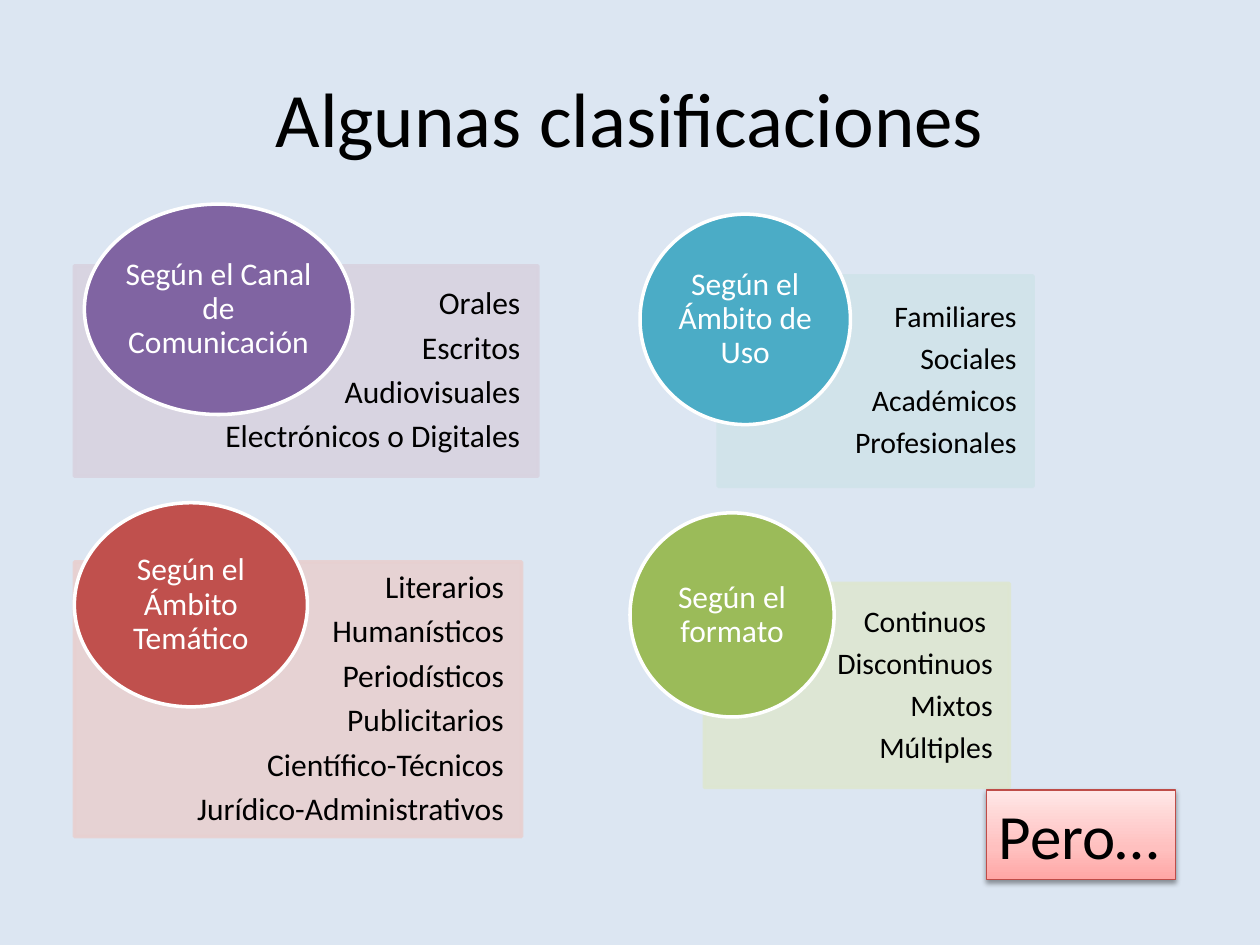
"""Build a slide that groups text types under four criteria."""
from copy import deepcopy
from lxml import etree
from pptx import Presentation
from pptx.dml.color import RGBColor
from pptx.enum import shapes, text
from pptx.oxml import ns
from pptx.util import Inches, Pt

HUES = {
    "back": "DCE6F2", "ink": "000000", "white": "FFFFFF",
    "violet": "8064A2", "lilac": "D8D3E0",
    "teal": "4BACC6", "aqua": "D0E3EA",
    "red": "C0504D", "rose": "E8D0D0",
    "green": "9BBB59", "lime": "DEE7D1",
    "edge": "BF4C48", "deep": "FFA6A5", "mid": "FFC0BF", "pale": "FFE7E7",
}
GROUPS = [
    ("violet", (0.67, 1.62, 2.13, 1.67), "Según el Canal de Comunicación",
     "lilac", (0.59, 2.11, 3.68, 1.67), 18, 0.59, 0.14,
     ["Orales", "Escritos", "Audiovisuales", "Electrónicos o Digitales"]),
    ("teal", (5.08, 1.7, 1.67, 1.67), "Según el Ámbito de Uso",
     "aqua", (5.7, 2.19, 2.5, 1.67), 17, 0.4, 0.13,
     ["Familiares", "Sociales", "Académicos", "Profesionales"]),
    ("red", (0.59, 3.99, 1.85, 1.62), "Según el Ámbito Temático",
     "rose", (0.59, 4.46, 3.55, 2.18), 18, 0.57, 0.14,
     ["Literarios", "Humanísticos", "Periodísticos", "Publicitarios",
      "Científico-Técnicos", "Jurídico-Administrativos"]),
    ("green", (5, 4.07, 1.62, 1.62), "Según el formato",
     "lime", (5.59, 4.63, 2.42, 1.62), 17, 0.39, 0.13,
     ["Continuos ", "Discontinuos", "Mixtos", "Múltiples"]),
]


def write(shape, words, size, hue, align, pads, anchor=text.MSO_ANCHOR.MIDDLE, tight=False):
    """Fill a shape with styled paragraphs."""
    frame = shape.text_frame
    frame.text = words
    frame.word_wrap = True
    frame.vertical_anchor = anchor
    (frame.margin_left, frame.margin_top,
     frame.margin_right, frame.margin_bottom) = map(Inches, pads)
    for para in frame.paragraphs:
        para.alignment = align
        if tight:
            para.line_spacing = 0.9
            para.space_after = Pt(round(size * 0.33, 1))
        for run in para.runs:
            run.font.name = "Calibri"
            run.font.size = Pt(size)
            run.font.color.rgb = RGBColor.from_string(HUES[hue])


def draw(kind, area, fill, line, width):
    """Add a plain shape with a solid fill and a line."""
    shape = slide.shapes.add_shape(kind, *map(Inches, area))
    shape.shadow.inherit = False
    shape.fill.solid()
    shape.fill.fore_color.rgb = RGBColor.from_string(HUES[fill])
    shape.line.color.rgb = RGBColor.from_string(HUES[line])
    shape.line.width = Pt(width)
    return shape


deck = Presentation()
deck.slide_width, deck.slide_height = Inches(10), Inches(7.5)
slide = deck.slides.add_slide(deck.slide_layouts[6])
slide.background.fill.solid()
slide.background.fill.fore_color.rgb = RGBColor.from_string(HUES["back"])
kinds, aligns = shapes.MSO_SHAPE, text.PP_ALIGN

title = slide.shapes.add_textbox(Inches(0.5), Inches(0.3), Inches(9), Inches(1.25))
write(title, "Algunas clasificaciones", 44, "ink", aligns.CENTER, (0.1, 0.05, 0.1, 0.05))

for dark, disc, name, light, area, size, left, pad, items in GROUPS:
    panel = draw(kinds.RECTANGLE, area, light, light, 2)
    for tint in panel._element.spPr.iter(ns.qn("a:srgbClr")):
        etree.SubElement(tint, ns.qn("a:alpha"), val="90000")
    write(panel, "\n".join(items), size, "ink", aligns.RIGHT, (left, pad, pad, pad), tight=True)
    oval = draw(kinds.OVAL, disc, dark, "white", 2)
    write(oval, name, 18, "white", aligns.CENTER, (0, 0, 0, 0), tight=True)

note = draw(kinds.RECTANGLE, (7.83, 6.27, 1.5, 0.71), "pale", "edge", 0.75)
write(note, "Pero…", 36, "ink", aligns.LEFT, (0.1, 0.05, 0.1, 0.05), text.MSO_ANCHOR.TOP)
note.text_frame.auto_size = text.MSO_AUTO_SIZE.SHAPE_TO_FIT_TEXT
note.fill.gradient()
note.fill.gradient_angle = 90
props = note._element.spPr
stops = props.find(".//" + ns.qn("a:gsLst"))
stops.append(deepcopy(stops[-1]))
for stop, hue, place in zip(note.fill.gradient_stops, ("deep", "mid", "pale"), (0, 0.35, 1)):
    stop.color.rgb = RGBColor.from_string(HUES[hue])
    stop.position = place
shade = etree.SubElement(
    props.find(ns.qn("a:effectLst")), ns.qn("a:outerShdw"),
    blurRad=str(Pt(3.1)), dist=str(Pt(1.6)), dir="5400000", rotWithShape="0")
tone = etree.SubElement(shade, ns.qn("a:srgbClr"), val=HUES["ink"])
etree.SubElement(tone, ns.qn("a:alpha"), val="38000")

deck.save("out.pptx")
